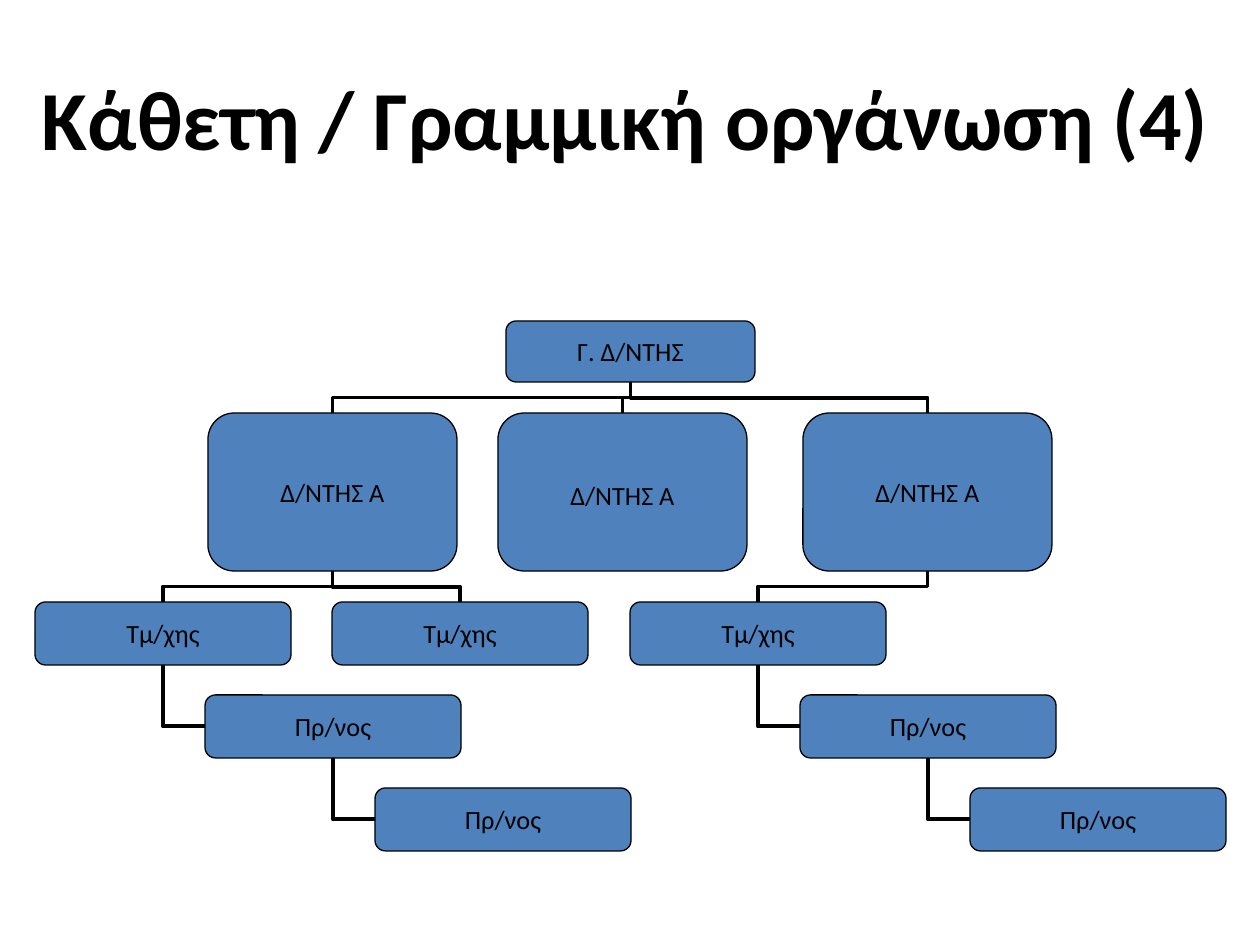
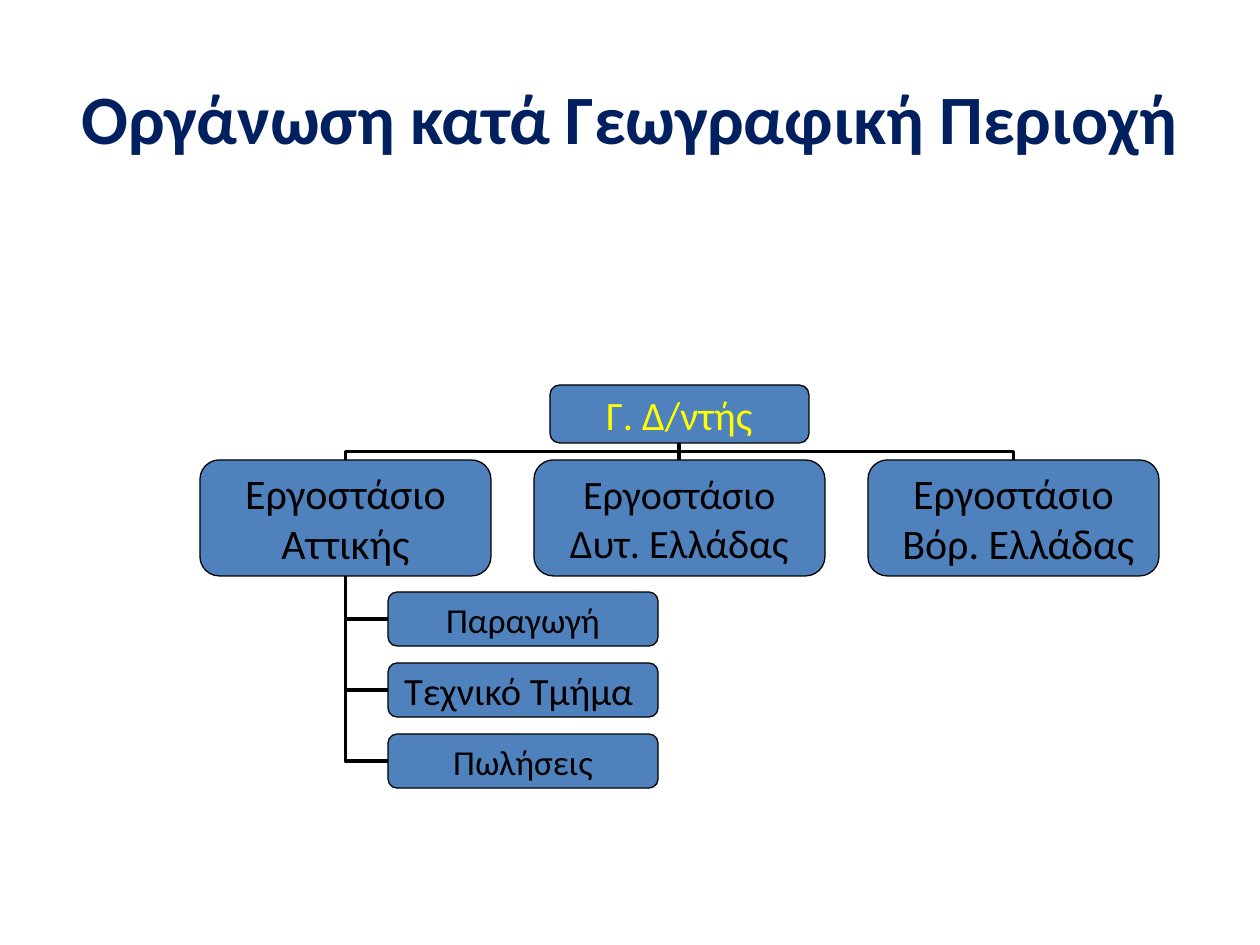
from lxml import etree
from pptx import Presentation
from pptx import util as u
from pptx.dml.color import RGBColor
from pptx.enum import shapes, text
from pptx.oxml.ns import qn

PX = u.Inches(1) / 126
FONT = "Calibri"
BLACK = RGBColor(0x00, 0x00, 0x00)
NAVY = RGBColor(0x00, 0x20, 0x60)
BLUE = RGBColor(0x4F, 0x81, 0xBD)
YELLOW = RGBColor(0xFF, 0xFF, 0x00)
BOTTOM, TOP, LEFT = 2, 0, 1


def add_label(slide, label, area, size, color=BLACK, title=False, inset=(4, 1)):
    x, y, w, h = [round(n * PX) for n in area]
    if title:
        holder = slide.shapes.add_textbox(x, y, w, h)
    else:
        holder = slide.shapes.add_shape(shapes.MSO_SHAPE.ROUNDED_RECTANGLE, x, y, w, h)
        holder.shadow.inherit = False
        holder.fill.solid()
        holder.fill.fore_color.rgb = BLUE
        holder.line.color.rgb = BLACK
        holder.line.width = u.Pt(0.75)
    frame = holder.text_frame
    frame.word_wrap = title
    frame.vertical_anchor = text.MSO_ANCHOR.MIDDLE
    if not title:
        frame.margin_left = frame.margin_right = round(inset[0] * PX)
        frame.margin_top = frame.margin_bottom = round(inset[1] * PX)
    for i, line in enumerate(label.split("\n")):
        paragraph = frame.paragraphs[0] if i == 0 else frame.add_paragraph()
        paragraph.alignment = text.PP_ALIGN.CENTER
        run = paragraph.add_run()
        run.text = line
        run.font.name = FONT
        run.font.size = u.Pt(size)
        run.font.bold = title
        run.font.color.rgb = color
    return holder


def link(slide, boss, report, side=TOP):
    x1, y1 = boss.left + boss.width // 2, boss.top + boss.height
    if side == TOP:
        x2, y2 = report.left + report.width // 2, report.top
    else:
        x2, y2 = report.left, report.top + report.height // 2
    straight = abs(x2 - x1) < PX
    kind = shapes.MSO_CONNECTOR.STRAIGHT if straight else shapes.MSO_CONNECTOR.ELBOW
    line = slide.shapes.add_connector(kind, x1, y1, x2, y2)
    line.begin_connect(boss, BOTTOM)
    line.end_connect(report, side)
    line.line.color.rgb = BLACK
    line.line.width = u.Pt(2.25)
    props = line._element.spPr
    etree.SubElement(props, qn("a:effectLst"))
    if straight:
        return
    across, down = abs(x2 - x1), y2 - y1
    line.left, line.top = (x1 + x2 - down) // 2, (y1 + y2 - across) // 2
    line.width, line.height = down, across
    turn = props.find(qn("a:xfrm"))
    turn.attrib.pop("flipH", None)
    turn.attrib.pop("flipV", None)
    turn.set("rot", "5400000")
    if x2 > x1:
        turn.set("flipV", "1")
    if side == LEFT:
        props.find(qn("a:prstGeom")).set("prst", "bentConnector2")


deck = Presentation()
deck.slide_width, deck.slide_height = u.Inches(10), u.Inches(7.5)
blank = deck.slide_layouts[6]

vertical = deck.slides.add_slide(blank)
add_label(vertical, "Κάθετη / Γραμμική οργάνωση (4)", (25, 38, 1201, 157), 48, title=True)
general = add_label(vertical, "Γ. Δ/ΝΤΗΣ", (506, 321, 249, 61), 15, inset=(10, 5))
directors = []
for x in (208, 498, 803):
    director = add_label(vertical, "Δ/ΝΤΗΣ Α", (x, 413, 249, 158), 15, inset=(10, 5))
    link(vertical, general, director)
    directors.append(director)
directors[1].text_frame.margin_top = round(11 * PX)

branches = [
    (35, directors[0], ["Τμ/χης", "Πρ/νος", "Πρ/νος"]),
    (332, directors[0], ["Τμ/χης"]),
    (630, directors[2], ["Τμ/χης", "Πρ/νος", "Πρ/νος"]),
]
for x, boss, ranks in branches:
    for level, rank in enumerate(ranks):
        area = (x + 170 * level, 602 + 93 * level, 256, 63)
        member = add_label(vertical, rank, area, 15, inset=(10, 5))
        link(vertical, boss, member, LEFT if level else TOP)
        boss = member

regional = deck.slides.add_slide(blank)
add_label(regional, "Οργάνωση κατά Γεωγραφική Περιοχή", (63, 38, 1134, 157), 39.6, NAVY, title=True)
general = add_label(regional, "Γ. Δ/ντής", (550, 385, 259, 58), 23, YELLOW)
factories = []
for i, (region, size) in enumerate([("Αττικής", 24), ("Δυτ. Ελλάδας", 23), (" Βόρ. Ελλάδας", 24)]):
    area = (200 + 334 * i, 460, 291, 116)
    factory = add_label(regional, "Εργοστάσιο\n" + region, area, size)
    link(regional, general, factory)
    factories.append(factory)
for i, (department, size) in enumerate([("Παραγωγή", 20), ("Τεχνικό Τμήμα ", 22), ("Πωλήσεις", 20)]):
    unit = add_label(regional, department, (388, 592 + 71 * i, 270, 54), size)
    link(regional, factories[0], unit, LEFT)

deck.save("out.pptx")
